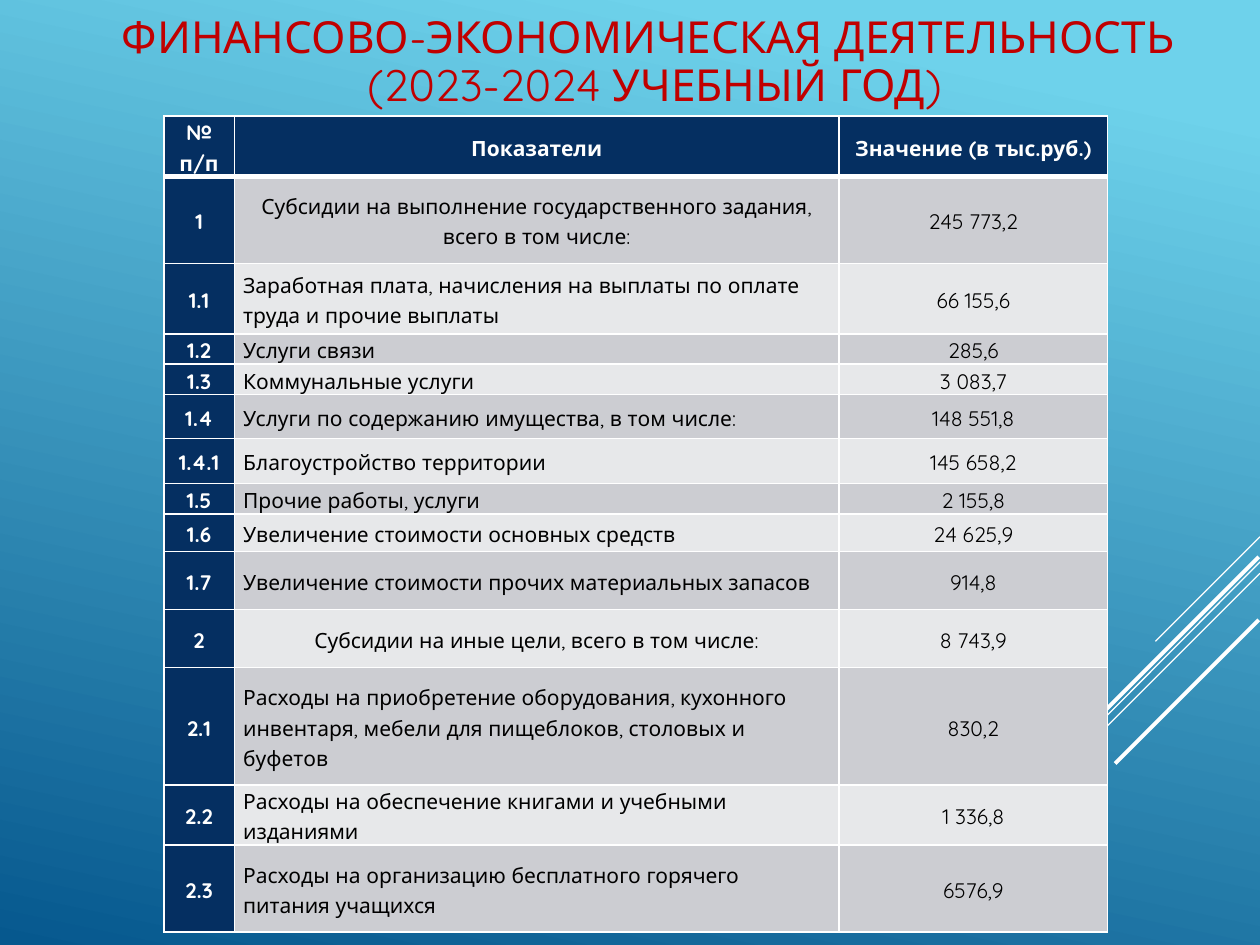
from lxml import etree
from pptx import Presentation
from pptx import util as u
from pptx.dml import color
from pptx.enum import shapes, text
from pptx.oxml import ns

FONT = "Quicksand"
WHITE, BLACK, NAVY, RED = "FFFFFF", "000000", "052F61", "C00000"
BANDS = ("CCCDD2", "E7E8EA")
COLUMNS = (0.56, 4.8, 2.13)
HEADER = ("№ п/п", "Показатели", "Значение (в тыс.руб.)")
HEADER_HEIGHT = 0.48
RECORDS = (
    (0.69, "1", "Субсидии на выполнение государственного задания, всего в том числе:", "245 773,2"),
    (0.56, "1.1", "Заработная плата, начисления на выплаты по оплате труда и прочие выплаты", "66 155,6"),
    (0.24, "1.2", "Услуги связи", "285,6"),
    (0.24, "1.3", "Коммунальные услуги", "3 083,7"),
    (0.35, "1.4", "Услуги по содержанию имущества, в том числе:", "148 551,8"),
    (0.36, "1.4.1", "Благоустройство территории", "145 658,2"),
    (0.24, "1.5", "Прочие работы, услуги", "2 155,8"),
    (0.3, "1.6", "Увеличение стоимости основных средств", "24 625,9"),
    (0.46, "1.7", "Увеличение стоимости прочих материальных запасов", "914,8"),
    (0.46, "2", "Субсидии на иные цели, всего в том числе:", "8 743,9"),
    (0.93, "2.1", "Расходы на приобретение оборудования, кухонного инвентаря, "
                  "мебели для пищеблоков, столовых и буфетов", "830,2"),
    (0.48, "2.2", "Расходы на обеспечение книгами и учебными изданиями", "1 336,8"),
    (0.69, "2.3", "Расходы на организацию бесплатного горячего питания учащихся", "6576,9"),
)
RAYS = (
    (10, 4.26, 9.17, 5.09, 0.75),
    (10, 4.46, 7.3, 7.17, 0.75),
    (10, 4.55, 8.28, 6.27, 0.75),
    (9.99, 4.42, 8.42, 5.99, 2.25),
    (9.99, 4.92, 8.85, 6.06, 2.25),
)


def rgb(value):
    """Turn a hex string into a colour."""
    return color.RGBColor.from_string(value)


def style_para(para, size, ink, bold=False, centred=True, spacing=1.15):
    """Format a paragraph and its runs."""
    para.alignment = text.PP_ALIGN.CENTER if centred else text.PP_ALIGN.LEFT
    para.line_spacing = spacing
    for span in para.runs:
        span.font.name = FONT
        span.font.size = u.Pt(size)
        span.font.bold = bold
        span.font.color.rgb = rgb(ink)


def paint_background(page):
    """Fill the page with a light-to-dark blue gradient."""
    fill = page.background.fill
    fill.gradient()
    fill.gradient_angle = 258
    for stop, (position, shade) in zip(fill.gradient_stops, ((0.1, "6ED2EB"), (1, "06588E"))):
        stop.position = position
        stop.color.rgb = rgb(shade)


def add_ray(page, x1, y1, x2, y2, width):
    """Draw one white diagonal line."""
    ends = [u.Inches(value) for value in (x1, y1, x2, y2)]
    ray = page.shapes.add_connector(shapes.MSO_CONNECTOR.STRAIGHT, *ends)
    ray.line.color.rgb = rgb(WHITE)
    ray.line.width = u.Pt(width)
    etree.SubElement(ray.element.spPr, ns.qn("a:effectLst"))


def set_title(page):
    """Place and format the two-line title."""
    title = page.shapes.title
    title.left, title.top = u.Inches(0.59), 0
    title.width, title.height = u.Inches(9.21), u.Inches(1.46)
    frame = title.text_frame
    frame.text = "ФИНАНСОВО-ЭКОНОМИЧЕСКАЯ ДЕЯТЕЛЬНОСТЬ \v(2023-2024 УЧЕБНЫЙ ГОД)"
    frame.word_wrap = True
    frame.auto_size = text.MSO_AUTO_SIZE.NONE
    frame.vertical_anchor = text.MSO_ANCHOR.MIDDLE
    frame.margin_top, frame.margin_bottom = 0, u.Inches(0.46)
    style_para(frame.paragraphs[0], 25.2, RED, spacing=0.9)


def set_borders(cell, top, bottom):
    """Give a cell white borders with the given top and bottom widths."""
    properties = cell._tc.get_or_add_tcPr()
    for side, width in (("L", 1), ("R", 1), ("T", top), ("B", bottom)):
        edge = etree.SubElement(properties, ns.qn(f"a:ln{side}"), w=str(u.Pt(width)))
        fill = etree.SubElement(edge, ns.qn("a:solidFill"))
        etree.SubElement(fill, ns.qn("a:srgbClr"), val=WHITE)


def fill_cell(cell, wording, row, column):
    """Write and format one table cell according to its place."""
    dark = row == 0 or column == 0
    section = column == 1 and row in (1, 10)
    set_borders(cell, 3 if row == 1 else 1, 3 if row == 0 else 1)
    cell.fill.solid()
    cell.fill.fore_color.rgb = rgb(NAVY if dark else BANDS[(row - 1) % 2])
    cell.margin_left = cell.margin_right = u.Inches(0.07)
    cell.margin_top = cell.margin_bottom = 0
    cell.vertical_anchor = text.MSO_ANCHOR.MIDDLE
    cell.text_frame.text = wording
    style_para(cell.text_frame.paragraphs[0], 12, WHITE if dark else BLACK,
               bold=dark, centred=dark or section or column == 2)


def add_budget_table(page):
    """Build the table of indicators and values."""
    rows = ((HEADER_HEIGHT, *HEADER), *RECORDS)
    height = sum(row[0] for row in rows)
    box = page.shapes.add_table(len(rows), len(COLUMNS), u.Inches(1.3), u.Inches(0.92),
                                u.Inches(sum(COLUMNS)), u.Inches(height))
    table = box.table
    for column, width in zip(table.columns, COLUMNS):
        column.width = u.Inches(width)
    for index, (row_height, *wordings) in enumerate(rows):
        table.rows[index].height = u.Inches(row_height)
        for column, wording in enumerate(wordings):
            fill_cell(table.cell(index, column), wording, index, column)


def main():
    """Build the slide and save it."""
    deck = Presentation()
    deck.slide_width, deck.slide_height = u.Inches(10), u.Inches(7.5)
    page = deck.slides.add_slide(deck.slide_layouts[5])
    paint_background(page)
    for ray in RAYS:
        add_ray(page, *ray)
    set_title(page)
    add_budget_table(page)
    deck.save("out.pptx")


if __name__ == "__main__":
    main()
